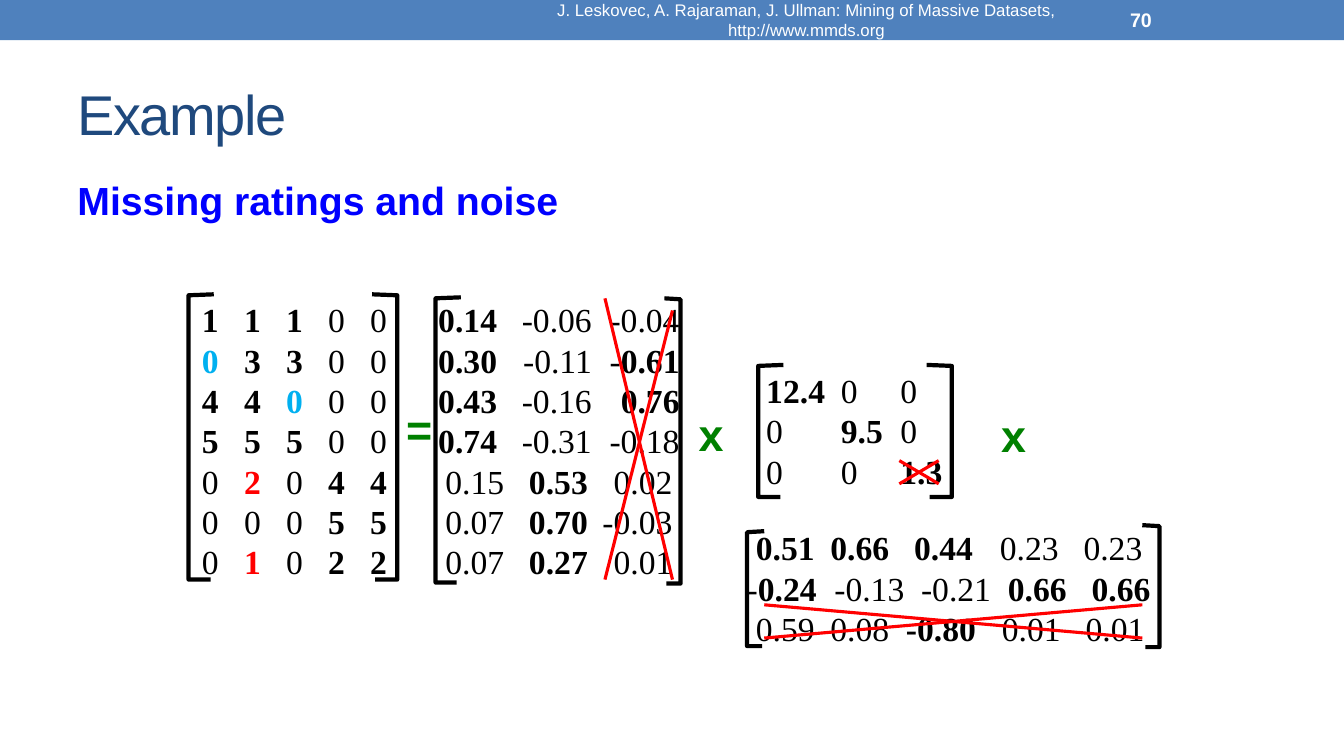
"""Build a slide on matrix factorization with missing ratings and noise."""
from lxml.etree import SubElement
from pptx import Presentation
from pptx.dml.color import RGBColor
from pptx.enum.shapes import MSO_CONNECTOR, MSO_SHAPE
from pptx.enum.text import MSO_ANCHOR, PP_ALIGN
from pptx.oxml.ns import qn
from pptx.util import Inches, Pt

SANS, SERIF = "Arial", "Times New Roman"
BLACK, WHITE, RED = (RGBColor.from_string(code) for code in ("000000", "FFFFFF", "FF0000"))
THEME = {
    "band": RGBColor.from_string("4F81BD"),
    "bracket": {"color": BLACK, "width": Pt(3)},
    "strike": {"color": RED, "width": Pt(2.25)},
    "title": {"name": SANS, "size": Pt(40), "color": RGBColor.from_string("1F497D")},
    "heading": {"name": SANS, "size": Pt(28), "bold": True, "color": RGBColor.from_string("0000FF")},
    "footer": {"name": SANS, "size": Pt(12), "color": WHITE},
    "number": {"name": SANS, "size": Pt(14), "bold": True, "color": WHITE},
    "operator": {"name": SANS, "size": Pt(32), "bold": True, "color": RGBColor.from_string("008000")},
    "plain": {"name": SERIF, "size": Pt(24), "bold": False, "color": BLACK},
    "*": {"name": SERIF, "size": Pt(24), "bold": True, "color": BLACK},
    "~": {"name": SERIF, "size": Pt(24), "bold": True, "color": RGBColor.from_string("00B0F0")},
    "!": {"name": SERIF, "size": Pt(24), "bold": True, "color": RED},
}
MATRIX_LINE = Pt(28.8)


def add_text_box(slide, place, **frame_format):
    """Add a text box at a place in inches and return its text frame."""
    frame = slide.shapes.add_textbox(*map(Inches, place)).text_frame
    for name, value in {"word_wrap": True, **frame_format}.items():
        setattr(frame, name, value)
    return frame


def add_run(paragraph, text, style):
    """Add a run in a named theme style and return it."""
    run = paragraph.add_run()
    run.text = text
    for name, value in THEME[style].items():
        if name == "color":
            run.font.color.rgb = value
        else:
            setattr(run.font, name, value)
    return run


presentation = Presentation()
presentation.slide_width, presentation.slide_height = Inches(13.33), Inches(7.5)
slide = presentation.slides.add_slide(presentation.slide_layouts[6])

band = slide.shapes.add_shape(MSO_SHAPE.RECTANGLE, 0, 0, presentation.slide_width, Inches(0.4))
band.shadow.inherit = False
band.fill.solid()
band.fill.fore_color.rgb = THEME["band"]
band.line.fill.background()

title = add_text_box(slide, (0.67, 0.58, 12, 1.08), vertical_anchor=MSO_ANCHOR.MIDDLE)
title_run = add_run(title.paragraphs[0], "Example", "title")
title_run._r.get_or_add_rPr().set("spc", "-100")

heading = add_text_box(slide, (0.67, 1.75, 12, 5.33)).paragraphs[0]
heading.line_spacing = 0.9
add_run(heading, "Missing ratings and noise", "heading")

footer = add_text_box(slide, (5, 0.02, 6, 0.36), vertical_anchor=MSO_ANCHOR.MIDDLE).paragraphs[0]
footer.alignment = PP_ALIGN.CENTER
add_run(footer, "J. Leskovec, A. Rajaraman, J. Ullman: Mining of Massive Datasets, http://www.mmds.org", "footer")
number = add_text_box(slide, (11.11, 0.02, 1.56, 0.36), vertical_anchor=MSO_ANCHOR.MIDDLE)
add_run(number.paragraphs[0], "70", "number")

for symbol, left, top in (("=", 3.93, 3.93), ("x", 6.83, 3.98), ("x", 9.83, 3.99)):
    operator = add_text_box(slide, (left, top, 0.45, 0.64), word_wrap=False, vertical_anchor=MSO_ANCHOR.MIDDLE)
    add_run(operator.paragraphs[0], symbol, "operator")

brackets = [
    (2.12, 1.87, 2.09, 2.92, 5.75),
    (3.69, 3.94, 3.72, 2.92, 5.75),
    (4.57, 4.32, 4.53, 2.95, 5.78),
    (6.59, 6.75, 6.61, 2.96, 5.79),
    (7.77, 7.52, 7.74, 3.62, 4.93),
    (9.19, 9.44, 9.22, 3.62, 4.93),
    (7.58, 7.41, 7.56, 5.27, 6.41),
    (11.33, 11.5, 11.36, 5.21, 6.42),
]
for top_tip, spine, bottom_tip, top, bottom in brackets:
    builder = slide.shapes.build_freeform(Inches(top_tip), Inches(top))
    corners = [(spine, top + 0.01), (spine, bottom), (bottom_tip, bottom)]
    builder.add_line_segments([(Inches(x), Inches(y)) for x, y in corners], close=False)
    bracket = builder.convert_to_shape()
    bracket.shadow.inherit = False
    bracket.fill.background()
    bracket.line.color.rgb = THEME["bracket"]["color"]
    bracket.line.width = THEME["bracket"]["width"]

rating_columns = [2.17 + 0.417 * column for column in range(5)]
upper_columns, lower_columns = (4.93, 5.87, 6.74), (5, 5.83, 6.67)
strength_columns = (7.6, 8.34, 8.93)
matrices = [
    ((1.83, 2.92, 2.17, 2.93), "r", [
        (rating_columns, "*1 *1 *1 0 0"),
        (rating_columns, "~0 *3 *3 0 0"),
        (rating_columns, "*4 *4 ~0 0 0"),
        (rating_columns, "*5 *5 *5 0 0"),
        (rating_columns, "0 !2 0 *4 *4"),
        (rating_columns, "0 0 0 *5 *5"),
        (rating_columns, "0 !1 0 *2 *2"),
    ]),
    ((4.17, 2.92, 2.75, 2.93), "r", [
        (upper_columns, "*0.14 -0.06 -0.04"),
        (upper_columns, "*0.30 -0.11 -*0.61"),
        (upper_columns, "*0.43 -0.16 *0.76"),
        (upper_columns, "*0.74 -0.31 -0.18"),
        (lower_columns, "0.15 *0.53 0.02"),
        (lower_columns, "0.07 *0.70 -0.03"),
        (lower_columns, "0.07 *0.27 0.01"),
    ]),
    ((7.5, 3.62, 2.17, 1.31), "l", [
        (strength_columns, "*12.4 0 0"),
        (strength_columns, "0 *9.5 0"),
        (strength_columns, "0 0 *1.3"),
    ]),
    ((7.31, 5.18, 4.25, 1.31), "r", [
        ((8.08, 8.82, 9.65, 10.5, 11.33), "*0.51 *0.66 *0.44 0.23 0.23"),
        ((8.1, 8.97, 9.83, 10.58, 11.41), "-*0.24 -0.13 -0.21 *0.66 *0.66"),
        ((8.08, 8.82, 9.68, 10.52, 11.35), "0.59 0.08 *-0.80 0.01 0.01"),
    ]),
]
for place, tab_side, rows in matrices:
    frame = add_text_box(slide, place, margin_left=0, margin_right=0)
    for index, (columns, cells) in enumerate(rows):
        paragraph = frame.add_paragraph() if index else frame.paragraphs[0]
        paragraph.line_spacing = MATRIX_LINE
        tab_list = SubElement(paragraph._p.get_or_add_pPr(), qn("a:tabLst"))
        for column in columns:
            SubElement(tab_list, qn("a:tab"), pos=str(Inches(column - place[0])), algn=tab_side)
        for cell in cells.split():
            mark = next((mark for mark in "*~!" if mark in cell), "*")
            plain, _, strong = cell.partition(mark)
            add_run(paragraph, "\t" + plain, "plain")
            if strong:
                add_run(paragraph, strong, mark)

strikes = [
    (6, 2.96, 6.67, 5.75),
    (6.67, 3.08, 6, 5.75),
    (7.58, 6, 11.33, 6.33),
    (11.33, 6, 7.58, 6.33),
    (8.92, 4.57, 9.31, 4.8),
    (9.31, 4.57, 8.92, 4.8),
]
for ends in strikes:
    strike = slide.shapes.add_connector(MSO_CONNECTOR.STRAIGHT, *map(Inches, ends))
    strike.line.color.rgb = THEME["strike"]["color"]
    strike.line.width = THEME["strike"]["width"]
    SubElement(strike._element.spPr, qn("a:effectLst"))

presentation.save("out.pptx")
